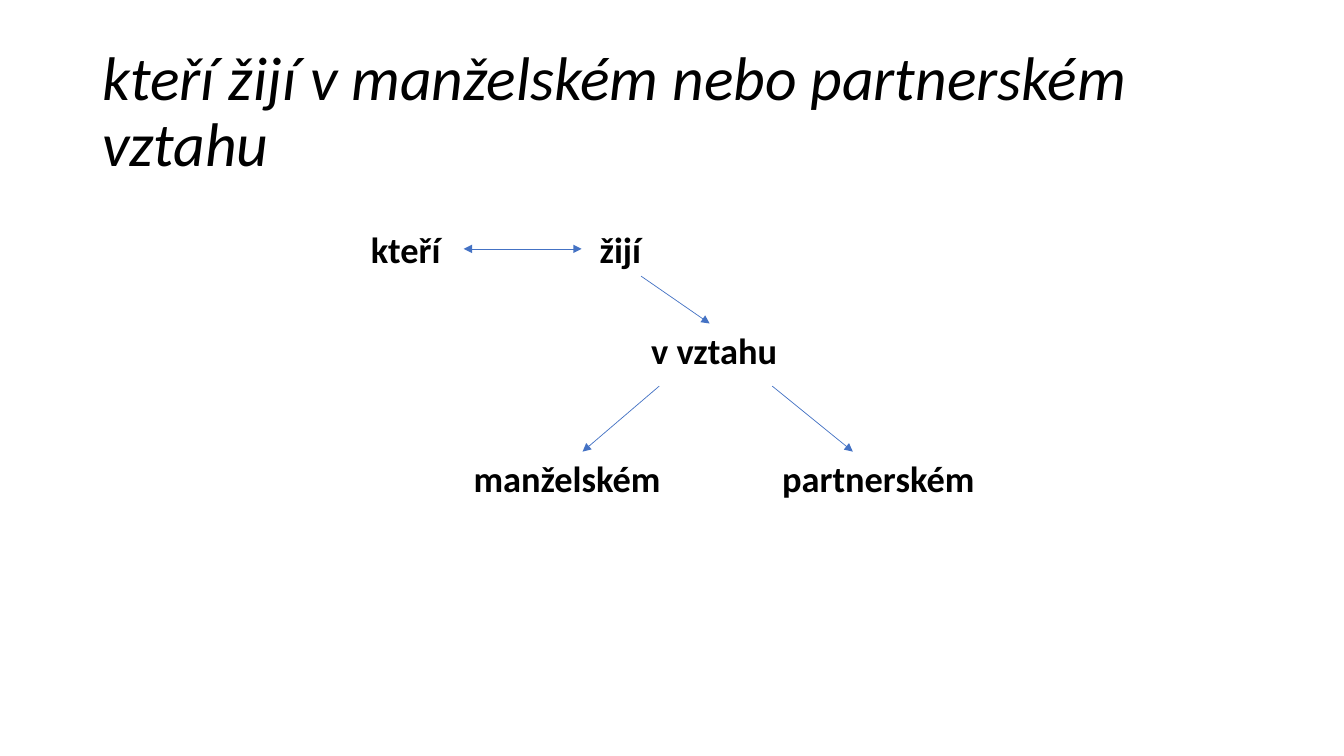
import pptx
import pptx.util
import pptx.dml.color
import pptx.enum.shapes
import pptx.enum.text
import pptx.oxml.ns
import lxml.etree

Pt = pptx.util.Pt
BLACK = pptx.dml.color.RGBColor(0x00, 0x00, 0x00)
BLUE = pptx.dml.color.RGBColor(0x44, 0x72, 0xC4)
WHITE = pptx.dml.color.RGBColor(0xFF, 0xFF, 0xFF)
FONT = "Calibri"
WORD_HEIGHT = 38.9

WORDS = [
    ("žijí", 163.4, 0, 118.1),
    ("kteří", 0, 0, 199.4),
    ("v vztahu", 200.2, 72.7, 259.2),
    ("manželském", 73.4, 164.2, 169.9),
    ("partnerském", 293.8, 164.2, 210.2),
]
ARROWS = [
    ((73.4, 19.4), (157.7, 19.4), ("headEnd", "tailEnd"), None),
    ((200.2, WORD_HEIGHT), (249.1, 72.7), ("tailEnd",), None),
    ((213.1, 117.4), (157.7, 164.2), ("tailEnd",), "manželském"),
    ((293.8, 117.4), (351.4, 164.2), ("tailEnd",), None),
]


def add_run(p, text, size, bold=False, italic=False):
    """Add one black run to a paragraph."""
    r = p.add_run()
    r.text = text
    r.font.name = FONT
    r.font.size = Pt(size)
    r.font.bold = bold
    r.font.italic = italic
    r.font.color.rgb = BLACK


def add_title(s, text, left, top, width, height):
    """Place the slide title in the given box."""
    sp = s.shapes.title
    sp.left, sp.top, sp.width, sp.height = map(Pt, (left, top, width, height))
    tf = sp.text_frame
    tf.word_wrap = True
    tf.auto_size = pptx.enum.text.MSO_AUTO_SIZE.NONE
    tf.vertical_anchor = pptx.enum.text.MSO_ANCHOR.MIDDLE
    p = tf.paragraphs[0]
    p.alignment = pptx.enum.text.PP_ALIGN.LEFT
    p.line_spacing = 0.9
    add_run(p, text, 44, italic=True)


def add_word(s, text, left, top, width):
    """Add one word of the sentence diagram."""
    sp = s.shapes.add_textbox(Pt(left), Pt(top), Pt(width), Pt(WORD_HEIGHT))
    tf = sp.text_frame
    tf.word_wrap = True
    tf.auto_size = pptx.enum.text.MSO_AUTO_SIZE.SHAPE_TO_FIT_TEXT
    add_run(tf.paragraphs[0], text, 26, bold=True)
    return sp


def add_arrow(s, start, end, heads):
    """Add a thin blue arrow with the given heads."""
    sp = s.shapes.add_connector(
        pptx.enum.shapes.MSO_CONNECTOR.STRAIGHT, *map(Pt, start + end))
    sp.line.color.rgb = BLUE
    sp.line.width = Pt(0.5)
    qn = pptx.oxml.ns.qn
    ln = sp.line._get_or_add_ln()
    for head in heads:
        lxml.etree.SubElement(ln, qn("a:" + head), type="triangle")
    lxml.etree.SubElement(sp._element.spPr, qn("a:effectLst"))
    return sp


def add_sentence_diagram(s, left, top):
    """Draw the words and their dependencies from a top left corner."""
    words = {text: add_word(s, text, left + x, top + y, width)
             for text, x, y, width in WORDS}
    for (x1, y1), (x2, y2), heads, target in ARROWS:
        sp = add_arrow(s, (left + x1, top + y1), (left + x2, top + y2), heads)
        if target:
            sp.end_connect(words[target], 0)


def main():
    """Build and save the slide."""
    prs = pptx.Presentation()
    prs.slide_width, prs.slide_height = Pt(960), Pt(540)
    s = prs.slides.add_slide(prs.slide_layouts[5])
    s.background.fill.solid()
    s.background.fill.fore_color.rgb = WHITE
    add_title(s, "kteří žijí v manželském nebo partnerském vztahu",
              66.2, 28.8, 869, 104.4)
    add_sentence_diagram(s, 257.8, 158.4)
    prs.save("out.pptx")


if __name__ == "__main__":
    main()
